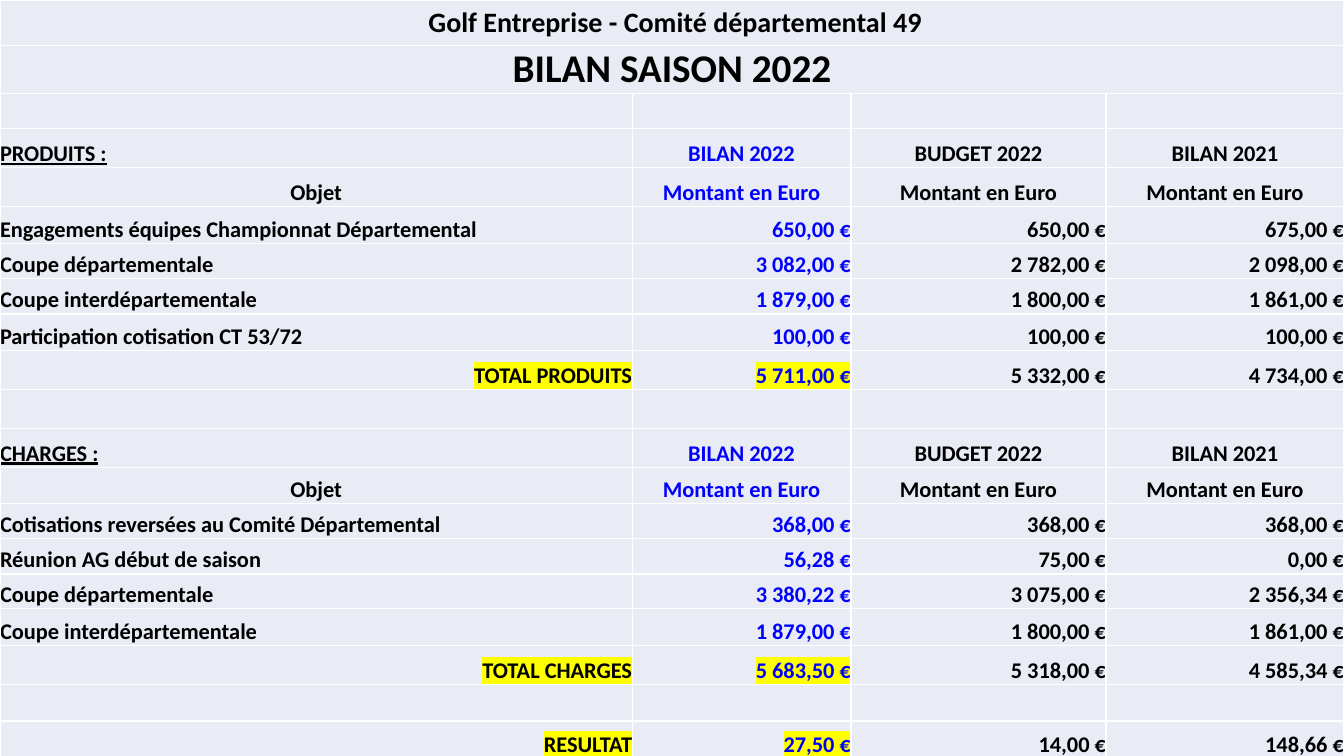
from lxml.etree import SubElement
from pptx import Presentation
from pptx.dml.color import RGBColor as Rgb
from pptx.enum.text import MSO_ANCHOR as Anchor, PP_ALIGN as Align
from pptx.oxml import parse_xml
from pptx.oxml.ns import nsdecls, qn
from pptx.util import Inches, Pt

COLORS = {"black": "000000", "blue": "0000FF", "yellow": "FFFF00",
          "cell": "E9EBF5", "border": "FFFFFF"}
COLUMN_WIDTHS = [6.27, 2.17, 2.53, 2.36]
ROW_HEIGHTS = [0.45, 0.45, 0.35, 0.39, 0.38, 0.37, 0.35, 0.35, 0.36, 0.39,
               0.39, 0.38, 0.36, 0.35, 0.35, 0.34, 0.37, 0.39, 0.36, 0.37]
LABEL_ALIGN = {"section": Align.LEFT, "header": Align.CENTER,
               "item": Align.LEFT, "total": Align.RIGHT}
PERIODS = ["BILAN 2022", "BUDGET 2022", "BILAN 2021"]
AMOUNT_HEADERS = ["Objet"] + ["Montant en Euro"] * 3

ROWS = [
    ("title", [" Golf Entreprise - Comité départemental 49"]),
    ("title", ["BILAN SAISON 2022"]),
    ("empty", []),
    ("section", ["PRODUITS :"] + PERIODS),
    ("header", AMOUNT_HEADERS),
    ("item", ["Engagements équipes Championnat Départemental", "650,00 €", "650,00 €", "675,00 €"]),
    ("item", ["Coupe départementale", "3 082,00 €", "2 782,00 €", "2 098,00 €"]),
    ("item", ["Coupe interdépartementale", "1 879,00 €", "1 800,00 €", "1 861,00 €"]),
    ("item", ["Participation cotisation CT 53/72", "100,00 €", "100,00 €", "100,00 €"]),
    ("total", ["TOTAL PRODUITS", "5 711,00 €", "5 332,00 €", "4 734,00 €"]),
    ("empty", []),
    ("section", ["CHARGES :"] + PERIODS),
    ("header", AMOUNT_HEADERS),
    ("item", ["Cotisations reversées au Comité Départemental", "368,00 €", "368,00 €", "368,00 €"]),
    ("item", ["Réunion AG début de saison", "56,28 €", "75,00 €", "0,00 €"]),
    ("item", ["Coupe départementale", "3 380,22 €", "3 075,00 €", "2 356,34 €"]),
    ("item", ["Coupe interdépartementale", "1 879,00 €", "1 800,00 €", "1 861,00 €"]),
    ("total", ["TOTAL CHARGES", "5 683,50 €", "5 318,00 €", "4 585,34 €"]),
    ("empty", []),
    ("total", ["RESULTAT", "27,50 €", "14,00 €", "148,66 €"]),
]


class Sheet:
    def __init__(self, slide, font="Calibri"):
        self.slide = slide
        self.font = font

    def table(self, widths, heights):
        frame = self.slide.shapes.add_table(
            len(heights), len(widths), Inches(0), Inches(0),
            Inches(sum(widths)), Inches(sum(heights)))
        table = frame.table
        table.first_row = table.horz_banding = False
        for column, width in zip(table.columns, widths):
            column.width = Inches(width)
        for row, height in zip(table.rows, heights):
            row.height = Inches(height)
        for cell in table.iter_cells():
            self.cell_style(cell)
        return table

    def cell_style(self, cell):
        cell.margin_left = cell.margin_right = Inches(0)
        cell.margin_top = cell.margin_bottom = Inches(0)
        cell.vertical_anchor = Anchor.BOTTOM
        properties = cell._tc.get_or_add_tcPr()
        for side in ("lnL", "lnR", "lnT", "lnB"):
            line = SubElement(properties, qn(f"a:{side}"), w=str(Pt(1)))
            fill = SubElement(line, qn("a:solidFill"))
            SubElement(fill, qn("a:srgbClr"), val=COLORS["border"])
        cell.fill.solid()
        cell.fill.fore_color.rgb = Rgb.from_string(COLORS["cell"])

    def text(self, cell, text, align, size=16, color="black", underline=False, highlight=False):
        para = cell.text_frame.paragraphs[0]
        para.alignment = align
        span = para.add_run()
        span.text = text
        span.font.name = self.font
        span.font.size = Pt(size)
        span.font.bold = True
        span.font.underline = underline
        span.font.color.rgb = Rgb.from_string(COLORS[color])
        if highlight:
            mark = parse_xml(f'<a:highlight {nsdecls("a")}>'
                             f'<a:srgbClr val="{COLORS["yellow"]}"/></a:highlight>')
            span.font._element.find(qn("a:solidFill")).addnext(mark)

    def title(self, table, row, text, size):
        cell = table.cell(row, 0)
        cell.merge(table.cell(row, len(table.columns) - 1))
        cell.vertical_anchor = Anchor.MIDDLE
        self.text(cell, text, Align.CENTER, size)

    def line(self, table, row, kind, texts):
        value_align = Align.CENTER if kind in ("section", "header") else Align.RIGHT
        for column, text in enumerate(texts):
            self.text(table.cell(row, column), text,
                      value_align if column else LABEL_ALIGN[kind],
                      color="blue" if column == 1 else "black",
                      underline=kind == "section" and column == 0,
                      highlight=kind == "total" and column < 2)


def main():
    deck = Presentation()
    deck.slide_width, deck.slide_height = Inches(13.33), Inches(7.5)
    page = deck.slides.add_slide(deck.slide_layouts[6])
    sheet = Sheet(page)
    table = sheet.table(COLUMN_WIDTHS, ROW_HEIGHTS)
    title_sizes = [20, 28]
    for row, (kind, texts) in enumerate(ROWS):
        if kind == "title":
            sheet.title(table, row, texts[0], title_sizes[row])
        else:
            sheet.line(table, row, kind, texts)
    deck.save("out.pptx")


if __name__ == "__main__":
    main()
